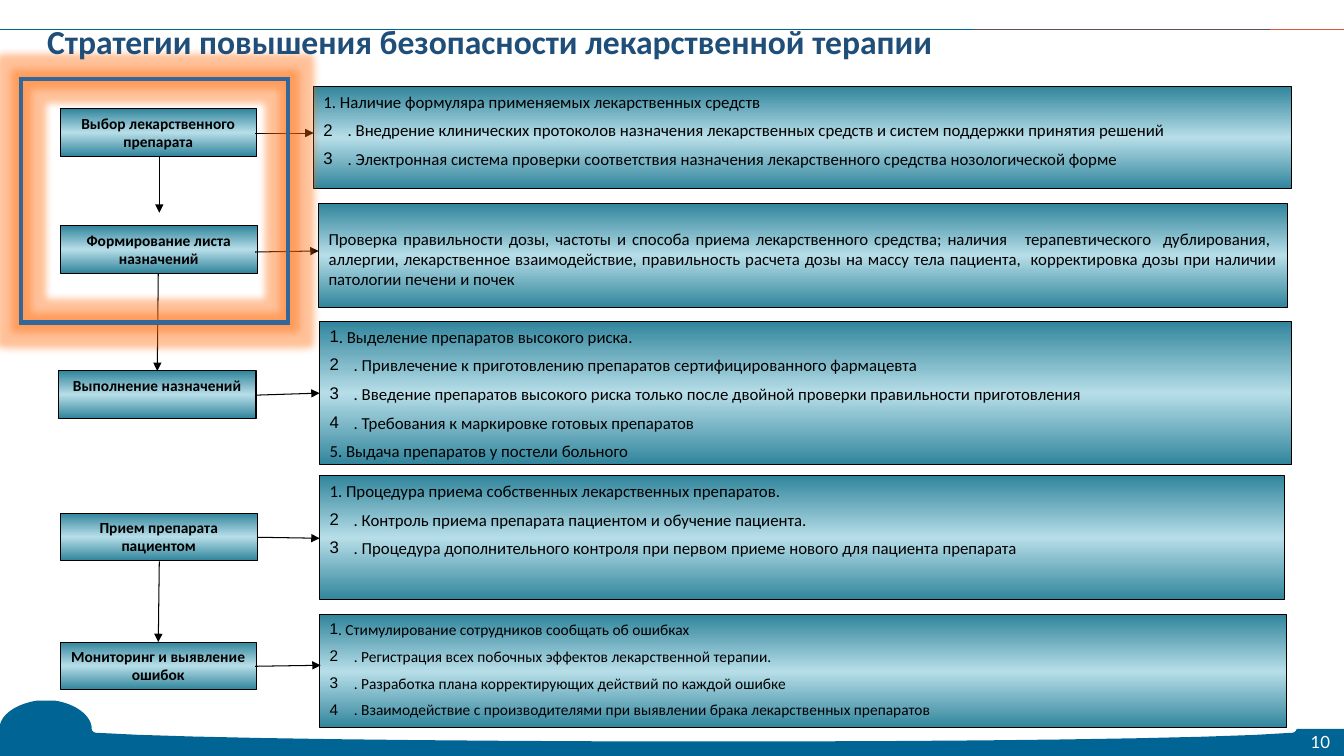
from copy import deepcopy
from lxml import etree
from pptx import Presentation
from pptx import util as u
from pptx.dml.color import RGBColor
from pptx.enum import shapes, text
from pptx.oxml.ns import qn

W, H = 13.33, 7.5
TEAL, SKY, BLACK, NAVY = "31859C", "B7DEE8", "000000", "006595"
LEFT, CENTER, JUSTIFY = text.PP_ALIGN.LEFT, text.PP_ALIGN.CENTER, text.PP_ALIGN.JUSTIFY
TITLE = "Стратегии повышения безопасности лекарственной терапии"
PAGE = "10"

# Steps: label, label box (left, top, width), detail box, size, top inset, lines.
# A line is (bullet, hanging indent, text).
HANG = 0.24
STEPS = [
    ("Выбор лекарственного препарата", (0.6, 1.08, 1.94), (3.11, 0.86, 9.7, 1.01), 12, 0.05, [
        ("", 0, "1. Наличие формуляра применяемых лекарственных средств"),
        ("2", HANG, ". Внедрение клинических протоколов назначения лекарственных средств и систем поддержки принятия решений"),
        ("3", HANG, ". Электронная система проверки соответствия назначения лекарственного средства нозологической форме")]),
    ("Формирование листа\nназначений", (0.6, 2.24, 1.95), (3.16, 2.02, 9.61, 1.03), 12, 0.25, [
        ("", 0, "Проверка правильности дозы, частоты и способа приема лекарственного средства; наличия   терапевтического  дублирования,  аллергии, лекарственное взаимодействие, правильность расчета дозы на массу тела пациента,  корректировка дозы при наличии патологии печени и почек")]),
    ("Выполнение назначений", (0.58, 3.68, 1.96), (3.17, 3.19, 9.64, 1.42), 12, 0.05, [
        ("1", 0, ". Выделение препаратов высокого риска."),
        ("2", HANG, ". Привлечение к приготовлению препаратов сертифицированного фармацевта"),
        ("3", HANG, ". Введение препаратов высокого риска только после двойной проверки правильности приготовления"),
        ("4", HANG, ". Требования к маркировке готовых препаратов"),
        ("", 0, "5. Выдача препаратов у постели больного")]),
    ("Прием препарата пациентом", (0.6, 5.09, 1.95), (3.17, 4.72, 9.57, 1.23), 12, 0.05, [
        ("", 0, "1. Процедура приема собственных лекарственных препаратов."),
        ("2", HANG, ". Контроль приема препарата пациентом и обучение пациента."),
        ("3", HANG, ". Процедура дополнительного контроля при первом приеме нового для пациента препарата")]),
    ("Мониторинг и выявление ошибок", (0.6, 6.37, 1.94), (3.17, 6.1, 9.59, 1.12), 11, 0.05, [
        ("1", 0, ". Стимулирование сотрудников сообщать об ошибках"),
        ("2", HANG, ". Регистрация всех побочных эффектов лекарственной терапии."),
        ("3", HANG, ". Разработка плана корректирующих действий по каждой ошибке"),
        ("4", HANG, ". Взаимодействие с производителями при выявлении брака лекарственных препаратов")]),
]
LABEL_H = 0.47
ARROWS = [  # label to detail, then step to step
    (2.53, 1.32, 3.11, 1.32), (2.53, 2.5, 3.16, 2.49), (2.55, 3.92, 3.17, 3.9),
    (2.55, 5.33, 3.17, 5.34), (2.53, 6.61, 3.18, 6.6),
    (1.58, 1.55, 1.58, 2.11), (1.57, 2.71, 1.56, 3.68), (1.58, 5.57, 1.57, 6.37),
]
RULES = [(0, 9.65, NAVY), (9.65, 12.6, "5F504C"), (12.6, W, "DA5743")]
# Footer wave: points are lines, six-number tuples are Bezier curves.
WAVE = [(0.54, 6.95), (0.75, 6.98, 0.91, 7.1, 0.91, 7.23), (0.91, 7.25, 0.93, 7.27, 0.96, 7.27),
        (2.68, 7.38, 11.27, 7.39, 12.81, 7.27), (12.84, 7.27, 12.86, 7.25, 12.86, 7.23),
        (W, 7.23), (W, H), (0, H), (0, 7.19), (0.03, 7.07, 0.18, 6.98, 0.37, 6.95)]


def rgb(value):
    return RGBColor.from_string(value)


def inches(values):
    return [u.Inches(v) for v in values]


def sub(parent, tag, **attrs):
    return etree.SubElement(parent, qn(tag), attrs)


def style(p, size, color, bold=False, font="Calibri", align=LEFT):
    p.alignment = align
    p.font.name, p.font.size, p.font.bold = font, u.Pt(size), bold
    p.font.color.rgb = rgb(color)


def line(s, ends, color, width, arrow=False):
    c = s.shapes.add_connector(shapes.MSO_CONNECTOR.STRAIGHT, *inches(ends))
    c.line.color.rgb, c.line.width = rgb(color), u.Pt(width)
    if arrow:
        sub(c.line._get_or_add_ln(), "a:tailEnd", type="triangle")
    sub(c._element.spPr, "a:effectLst")


def box(s, at, top_inset=0.05):
    sp = s.shapes.add_shape(shapes.MSO_SHAPE.RECTANGLE, *inches(at))
    sp.shadow.inherit = False
    sp.line.color.rgb, sp.line.width = rgb(BLACK), u.Pt(0.75)
    sp.fill.gradient()
    sp.fill.gradient_angle = 90
    stops = sp._element.spPr.find(qn("a:gradFill")).find(qn("a:gsLst"))
    stops.append(deepcopy(stops[0]))
    for i, (stop, color) in enumerate(zip(sp.fill.gradient_stops, (TEAL, SKY, TEAL))):
        stop.position, stop.color.rgb = i / 2, rgb(color)
    tf = sp.text_frame
    tf.word_wrap, tf.vertical_anchor = True, text.MSO_ANCHOR.TOP
    tf.margin_top = u.Inches(top_inset)
    return tf


def detail(s, at, size, top_inset, lines):
    tf = box(s, at, top_inset)
    for i, (bullet, hang, words) in enumerate(lines):
        p = tf.add_paragraph() if i else tf.paragraphs[0]
        p.text = words
        pPr = p._p.get_or_add_pPr()
        if bullet:
            pPr.set("marL", str(u.Inches(hang)))
            pPr.set("indent", str(-u.Inches(hang)))
            sub(pPr, "a:buFont", typeface="Arial")
            sub(pPr, "a:buChar", char=bullet)
        p.space_after = u.Pt(6)
        style(p, size, BLACK, align=LEFT if len(lines) > 1 else JUSTIFY)


def plain_text(s, at, words, inset=None):
    tf = s.shapes.add_textbox(*inches(at)).text_frame
    tf.word_wrap, tf.vertical_anchor = True, text.MSO_ANCHOR.MIDDLE
    if inset is not None:
        tf.margin_left = tf.margin_right = tf.margin_top = tf.margin_bottom = inset
    tf.text = words
    return tf.paragraphs[0]


def wave_points(steps=16):
    x, y = WAVE[0]
    for seg in WAVE[1:]:
        if len(seg) == 6:
            a, b, c, d, e, f = seg
            for t in (k / steps for k in range(1, steps + 1)):
                q = 1 - t
                yield (q**3 * x + 3 * q * q * t * a + 3 * q * t * t * c + t**3 * e,
                       q**3 * y + 3 * q * q * t * b + 3 * q * t * t * d + t**3 * f)
        else:
            yield seg
        x, y = seg[-2:]


def main():
    prs = Presentation()
    prs.slide_width, prs.slide_height = inches((W, H))
    s = prs.slides.add_slide(prs.slide_layouts[6])

    # Footer wave, top rule and page number
    fb = s.shapes.build_freeform(*inches(WAVE[0]), scale=1.0)
    fb.add_line_segments([inches(pt) for pt in wave_points()], close=True)
    wave = fb.convert_to_shape()
    wave.shadow.inherit = False
    wave.fill.solid()
    wave.fill.fore_color.rgb = rgb(NAVY)
    wave.line.fill.background()
    for x1, x2, color in RULES:
        line(s, (x1, 0.29, x2, 0.29), color, 1)
    style(plain_text(s, (12.92, 7.23, 0.35, 0.26), PAGE, 0), 12, "FFFFFF", font="Lato", align=CENTER)

    # Steps with their details
    for label, (x, y, w), detail_at, size, top_inset, lines in STEPS:
        tf = box(s, (x, y, w, LABEL_H))
        tf.text = label
        for p in tf.paragraphs:
            style(p, 11, BLACK, bold=True, align=CENTER)
        detail(s, detail_at, size, top_inset, lines)
    for ends in ARROWS:
        line(s, ends, BLACK, 0.75, arrow=True)

    # Softly glowing frame around the first two steps
    frame = s.shapes.add_shape(shapes.MSO_SHAPE.RECTANGLE, *inches((0.21, 0.78, 2.65, 2.42)))
    frame.fill.background()
    frame.line.color.rgb, frame.line.width = rgb("336699"), u.Pt(3)
    sub(frame.line._get_or_add_ln(), "a:miter", lim="800000")
    effects = sub(frame._element.spPr, "a:effectLst")
    glow = sub(effects, "a:glow", rad=str(u.Pt(11)))
    sub(sub(glow, "a:srgbClr", val="FF6600"), "a:alpha", val="40000")

    # Title, kept above the glow
    style(plain_text(s, (0.37, 0.03, 12.44, 0.75), TITLE), 24, "1F4E79", bold=True)

    prs.save("out.pptx")


if __name__ == "__main__":
    main()
